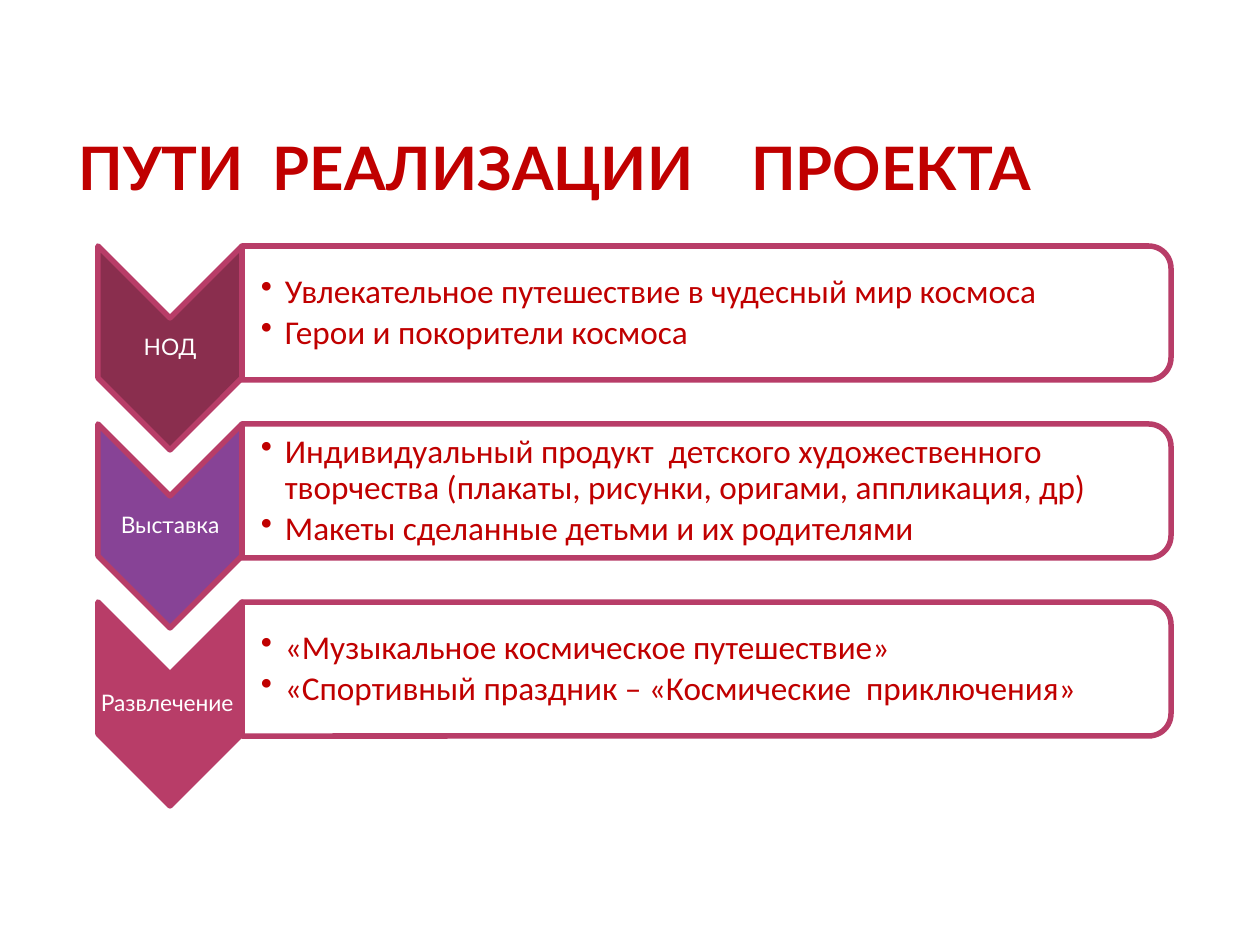
from dataclasses import dataclass

from lxml import etree
from pptx import Presentation
from pptx.dml.color import RGBColor
from pptx.enum.shapes import MSO_SHAPE
from pptx.enum.text import MSO_ANCHOR, PP_ALIGN
from pptx.oxml.ns import qn
from pptx.util import Emu, Pt

CHEVRON = MSO_SHAPE.CHEVRON
ROUNDED_END = MSO_SHAPE.ROUND_2_SAME_RECTANGLE
MIDDLE, BOTTOM = MSO_ANCHOR.MIDDLE, MSO_ANCHOR.BOTTOM
LEFT, CENTER = PP_ALIGN.LEFT, PP_ALIGN.CENTER


@dataclass(frozen=True)
class Theme:
    red: str = "C00000"
    white: str = "FFFFFF"
    outline: str = "B83D68"
    heading_font: str = "Lato"
    body_font: str = "Calibri"
    title_size: float = 34.2
    label_size: float = 13
    body_size: float = 19
    line_width: float = 3.15


THEME = Theme()

STAGES = [
    ("НОД", "8A2E4E", [
        "Увлекательное путешествие в чудесный мир космоса",
        "Герои и покорители космоса",
    ]),
    ("Выставка", "874396", [
        "Индивидуальный продукт  детского художественного творчества "
        "(плакаты, рисунки, оригами, аппликация, др)",
        "Макеты сделанные детьми и их родителями",
    ]),
    ("Развлечение ", "B83D68", [
        "«Музыкальное космическое путешествие»",
        "«Спортивный праздник – «Космические  приключения»",
    ]),
]


def px(length):
    return Emu(round(length * 914400 / 126))


def rgb(color):
    return RGBColor.from_string(color)


def add_turned_shape(slide, preset, left, top, width, height, fill, opacity=100):
    shift = (width - height) / 2
    shape = slide.shapes.add_shape(
        preset, px(left + shift), px(top - shift), px(height), px(width))
    shape.rotation = 90
    shape.shadow.inherit = False
    shape.fill.solid()
    shape.fill.fore_color.rgb = rgb(fill)
    if opacity < 100:
        color = shape.fill._xPr.find(qn("a:solidFill"))[0]
        etree.SubElement(color, qn("a:alpha")).set("val", str(opacity * 1000))
    shape.line.color.rgb = rgb(THEME.outline)
    shape.line.width = Pt(THEME.line_width)


def add_bullet(paragraph):
    properties = paragraph._p.get_or_add_pPr()
    properties.set("marL", str(px(24)))
    properties.set("indent", str(px(-24)))
    etree.SubElement(properties, qn("a:buChar")).set("char", "•")


def add_text(slide, left, top, width, height, lines, font, size, color,
             align=CENTER, anchor=MIDDLE, insets=(1, 1, 1, 1), bold=False,
             bullets=False, spacing=None, after=0):
    frame = slide.shapes.add_textbox(
        px(left), px(top), px(width), px(height)).text_frame
    frame.word_wrap = True
    frame.vertical_anchor = anchor
    (frame.margin_left, frame.margin_top,
     frame.margin_right, frame.margin_bottom) = map(px, insets)
    frame.text = "\n".join(lines)
    for paragraph in frame.paragraphs:
        if bullets:
            add_bullet(paragraph)
        paragraph.alignment = align
        paragraph.line_spacing = spacing
        paragraph.space_after = Pt(after)
        for run in paragraph.runs:
            run.font.name = font
            run.font.size = Pt(size)
            run.font.bold = bold
            run.font.color.rgb = rgb(color)


def add_title(slide, left, top, width, height):
    add_text(slide, left, top, width, height, ["ПУТИ  РЕАЛИЗАЦИИ    ПРОЕКТА "],
             THEME.heading_font, THEME.title_size, THEME.red,
             anchor=BOTTOM, insets=(6, 0, 6, 0), bold=True)


def add_stage(slide, left, top, width, height, stage):
    label, fill, activities = stage
    arrow_width, panel_height = 144, 134
    notch = arrow_width // 2
    panel_left, panel_width = left + arrow_width, width - arrow_width

    add_turned_shape(slide, CHEVRON, left, top, arrow_width, height, fill)
    add_text(slide, left, top + notch, arrow_width, height - 2 * notch, [label],
             THEME.heading_font, THEME.label_size, THEME.white,
             spacing=0.9, after=4.55)
    add_turned_shape(slide, ROUNDED_END, panel_left, top, panel_width,
                     panel_height, THEME.white, opacity=90)
    add_text(slide, panel_left, top + 7, panel_width - 7, panel_height - 14,
             activities, THEME.body_font, THEME.body_size, THEME.red,
             align=LEFT, insets=(19, 1, 1, 1), bullets=True,
             spacing=0.9, after=2.85)


def add_stages(slide, left, top, width, height):
    stage_height = 204
    pitch = (height - stage_height) // (len(STAGES) - 1)
    for row, stage in enumerate(STAGES):
        add_stage(slide, left, top + row * pitch, width, stage_height, stage)


def main():
    deck = Presentation()
    deck.slide_width, deck.slide_height = px(1260), px(945)
    slide = deck.slides.add_slide(deck.slide_layouts[6])
    add_title(slide, 63, 44, 998, 158)
    add_stages(slide, 98, 246, 1073, 560)
    deck.save("out.pptx")


if __name__ == "__main__":
    main()
